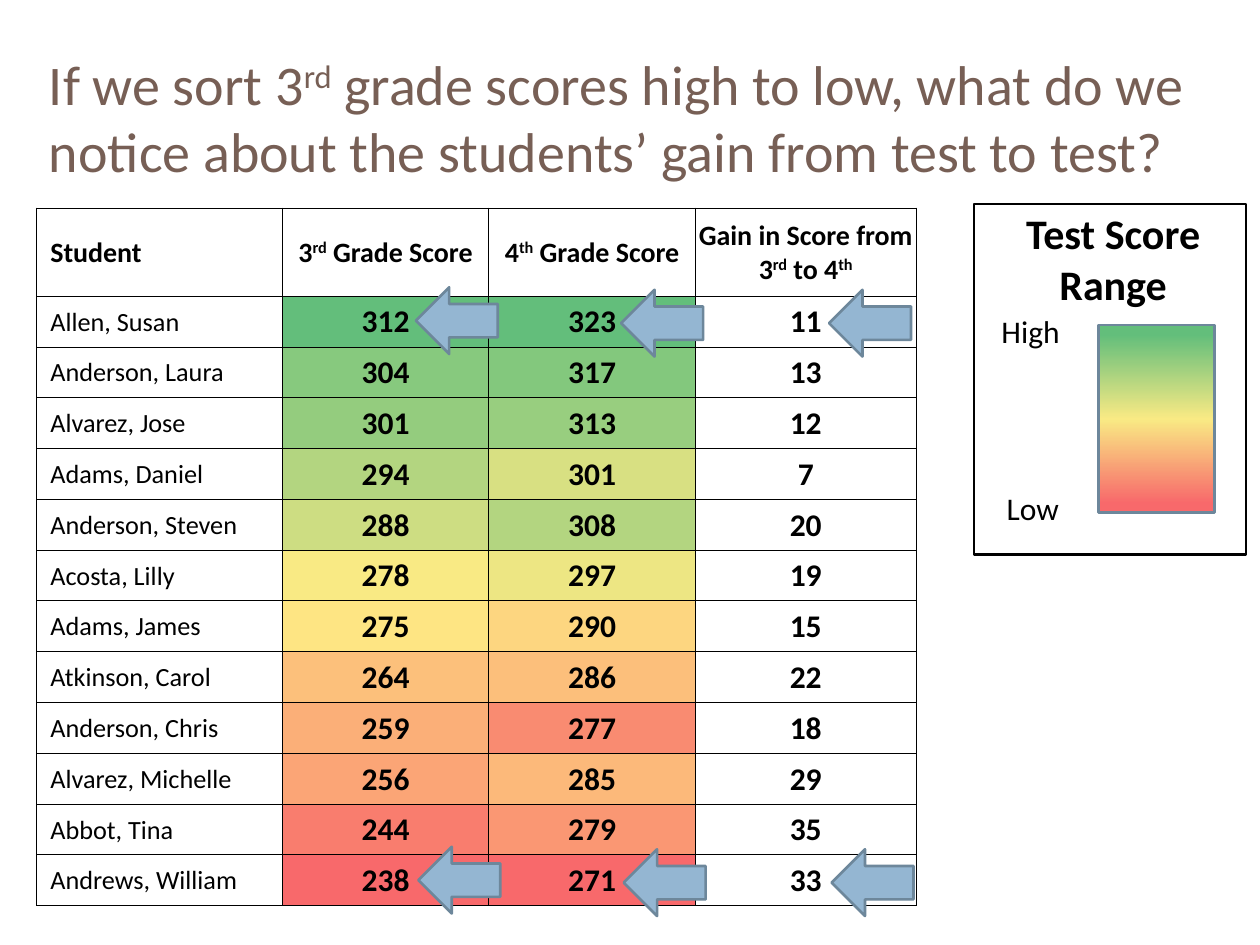
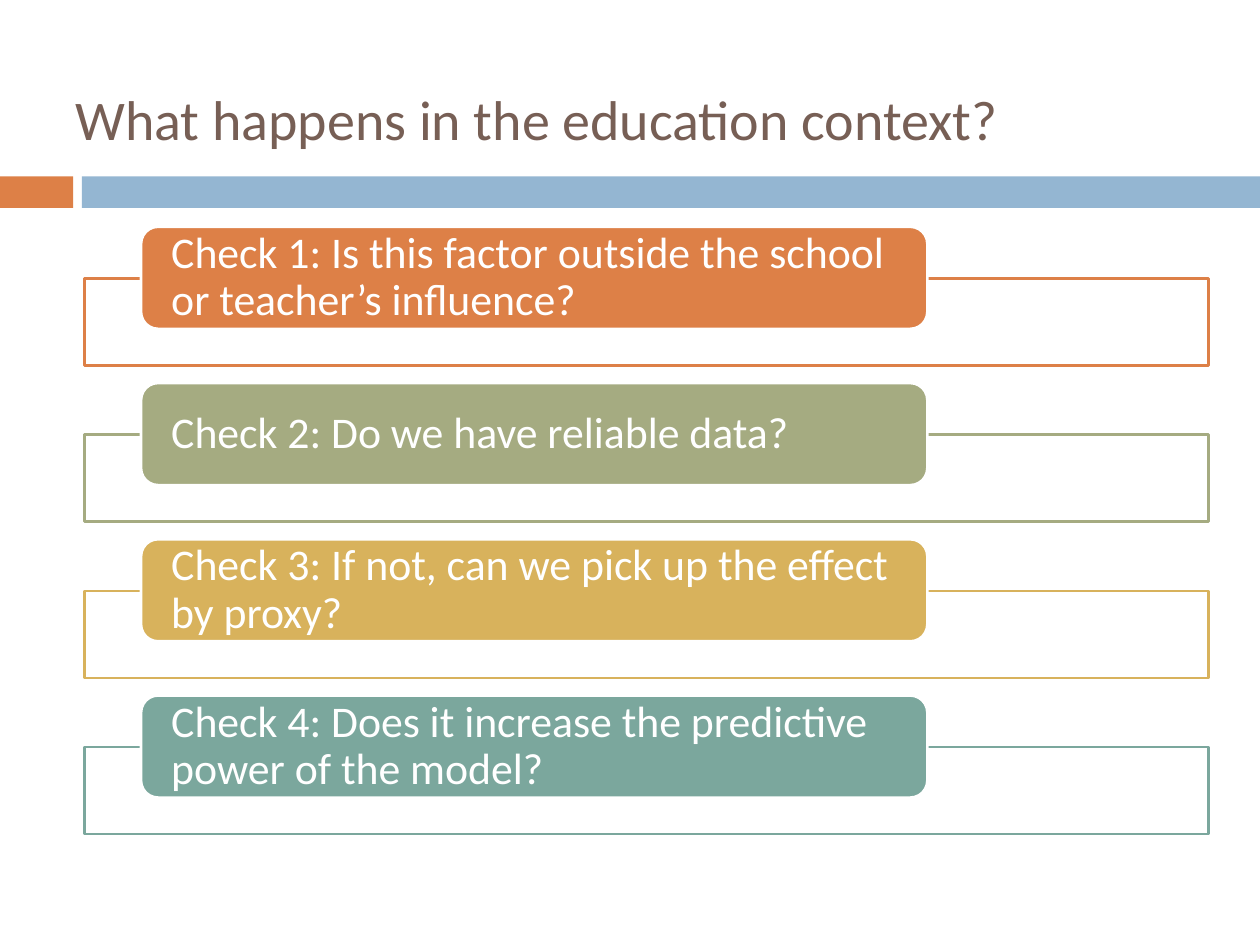
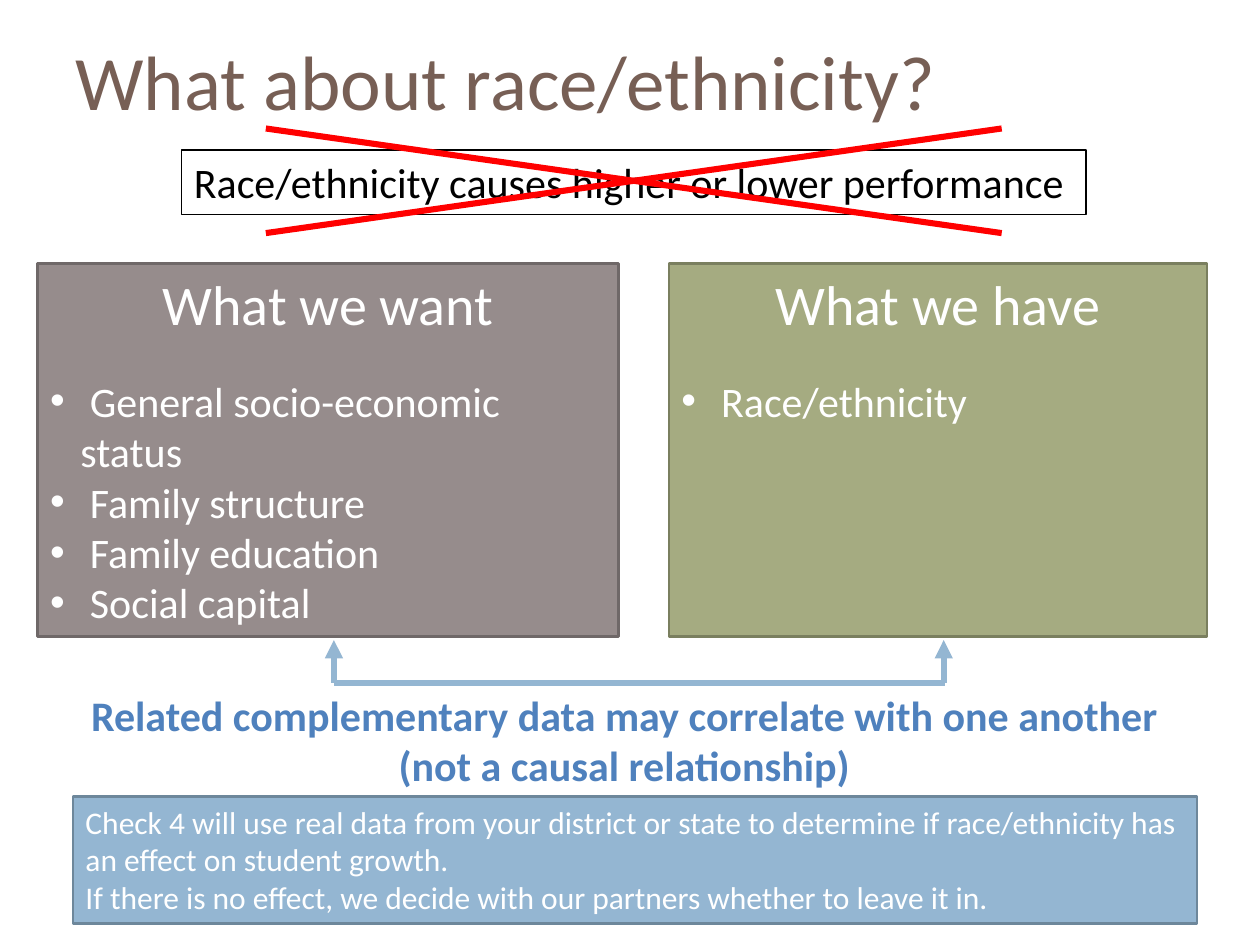
"""Builds three slides on student score growth and checks for model factors."""
from copy import deepcopy

from lxml import etree
from pptx import Presentation
from pptx import util as u
from pptx.dml.color import RGBColor
from pptx.enum import shapes, text
from pptx.oxml import ns

ORANGE, BLUE, GREEN, GOLD, TEAL = "DD8047", "94B6D2", "A5AB81", "D8B25C", "7BA79D"
BROWN, BLUE_EDGE, BLACK, WHITE, RED = "775F55", "6D879B", "000000", "FFFFFF", "FF0000"
CENTER, LEFT = text.PP_ALIGN.CENTER, text.PP_ALIGN.LEFT
MIDDLE, TOP = text.MSO_ANCHOR.MIDDLE, text.MSO_ANCHOR.TOP
SHAPE = shapes.MSO_SHAPE
BODY = {"word_wrap": True, "vertical_anchor": TOP}
TITLE = {"word_wrap": True, "vertical_anchor": MIDDLE}


def draw(slide, kind, box, fill=None, line=None, width=1.5):
    """Add a text box (kind None) or a preset shape with plain formatting."""
    place = [u.Inches(value) for value in box]
    if kind is None:
        return slide.shapes.add_textbox(*place)
    shape = slide.shapes.add_shape(kind, *place)
    shape.shadow.inherit = False
    for part, color in ((shape.fill, fill), (shape.line.fill, line)):
        if color:
            part.solid()
            part.fore_color.rgb = RGBColor.from_string(color)
        else:
            part.background()
    if line:
        shape.line.width = u.Pt(width)
    return shape


def write(frame, lines, size, color, align=LEFT, bold=False, frame_format=BODY):
    """Fill a text frame with paragraphs; parts between carets are superscript."""
    for name, value in frame_format.items():
        setattr(frame, name, value)
    for number, line in enumerate(lines):
        paragraph = frame.add_paragraph() if number else frame.paragraphs[0]
        paragraph.alignment = align
        for position, part in enumerate(line.split("^")):
            if not part:
                continue
            run = paragraph.add_run()
            run.text = part
            font_format = {"name": "Calibri", "size": u.Pt(size), "bold": bold}
            for name, value in font_format.items():
                setattr(run.font, name, value)
            run.font.color.rgb = RGBColor.from_string(color)
            if position % 2:
                run._r.get_or_add_rPr().set("baseline", "30000")


presentation = Presentation()
presentation.slide_width, presentation.slide_height = u.Inches(10), u.Inches(7.5)
titles = [
    ("If we sort 3^rd^ grade scores high to low, what do we notice about the "
     "students’ gain from test to test?", (0.29, 0.3, 9.51, 1.25), 32),
    ("What happens in the education context?", (0.5, 0.31, 9, 1.25), 32),
    ("What about race/ethnicity?", (0.5, 0.01, 9, 1.25), 44),
]
slides = []
for title, box, size in titles:
    slide = presentation.slides.add_slide(presentation.slide_layouts[6])
    write(draw(slide, None, box).text_frame, [title], size, BROWN, frame_format=TITLE)
    slides.append(slide)
scores_slide, checks_slide, race_slide = slides

headers = ["Student", "3^rd^ Grade Score", "4^th^ Grade Score",
           "Gain in Score from 3^rd^ to 4^th^"]
students = [
    ("Allen, Susan", 312, "63BE7B", 323, "63BE7B"),
    ("Anderson, Laura", 304, "87C97E", 317, "83C87D"),
    ("Alvarez, Jose", 301, "94CC7E", 313, "98CE7F"),
    ("Adams, Daniel", 294, "B3D580", 301, "D8E082"),
    ("Anderson, Steven", 288, "CDDD82", 308, "B3D580"),
    ("Acosta, Lilly", 278, "F9EA84", 297, "EDE683"),
    ("Adams, James", 275, "FEE583", 290, "FDD680"),
    ("Atkinson, Carol", 264, "FCC07B", 286, "FCBF7B"),
    ("Anderson, Chris", 259, "FBAF78", 277, "F98B71"),
    ("Alvarez, Michelle", 256, "FBA576", 285, "FCB97A"),
    ("Abbot, Tina", 244, "F97D6E", 279, "FA9773"),
    ("Andrews, William", 238, "F8696B", 271, "F8696B"),
]
rows = [[(header, None) for header in headers]]
for name, third, third_color, fourth, fourth_color in students:
    rows.append([(name, None), (str(third), third_color),
                 (str(fourth), fourth_color), (str(fourth - third), None)])

table = scores_slide.shapes.add_table(
    len(rows), len(headers), u.Inches(0.29), u.Inches(1.65), u.Inches(6.97), u.Inches(5.54)).table
table.first_row = table.horz_banding = False
for column, width in zip(table.columns, (1.95, 1.64, 1.64, 1.75)):
    column.width = u.Inches(width)
for row_number, row in enumerate(rows):
    table.rows[row_number].height = u.Inches((5.54 - 0.7) / len(students) if row_number else 0.7)
    for column_number, (words, color) in enumerate(row):
        cell = table.cell(row_number, column_number)
        cell_format = {"margin_left": u.Inches(0.01 if column_number else 0.11),
                       "margin_right": u.Inches(0.01), "margin_top": u.Inches(0.01),
                       "margin_bottom": 0, "vertical_anchor": MIDDLE}
        for name, value in cell_format.items():
            setattr(cell, name, value)
        properties = cell._tc.get_or_add_tcPr()
        for side in ("lnL", "lnR", "lnT", "lnB"):
            border = etree.SubElement(properties, ns.qn("a:" + side), w=str(u.Pt(0.5)))
            border_fill = etree.SubElement(border, ns.qn("a:solidFill"))
            etree.SubElement(border_fill, ns.qn("a:srgbClr"), val=BLACK)
        if color:
            cell.fill.solid()
            cell.fill.fore_color.rgb = RGBColor.from_string(color)
        else:
            cell.fill.background()
        size = 16 if row_number == 0 else 18 if column_number else 15
        write(cell.text_frame, [words], size, BLACK, CENTER if column_number else LEFT,
              row_number == 0 or column_number > 0, {})

for words, box in (("High", (7.85, 2.43, 0.67, 0.4)), ("Low", (7.89, 3.83, 0.62, 0.4))):
    write(draw(scores_slide, None, box).text_frame, [words], 18, BLACK)
legend_title = draw(scores_slide, None, (7.75, 1.6, 2.17, 0.91))
write(legend_title.text_frame, ["Test Score", "Range"], 24, BLACK, CENTER, True)

color_scale = draw(scores_slide, SHAPE.RECTANGLE, (8.72, 2.58, 0.92, 1.49), WHITE, BLUE_EDGE)
color_scale.fill.gradient()
color_scale.fill.gradient_angle = 270
stop_list = color_scale._element.spPr.find(".//" + ns.qn("a:gsLst"))
stop_list.append(deepcopy(stop_list[0]))
scale_stops = ((0.05, "63BE7B"), (0.5, "F9EA84"), (0.95, "F8696B"))
for stop, (position, color) in zip(color_scale.fill.gradient_stops, scale_stops):
    stop.position = position
    stop.color.rgb = RGBColor.from_string(color)
draw(scores_slide, SHAPE.RECTANGLE, (7.73, 1.62, 2.16, 2.78), None, BLACK)

for shift, top in ((0, 2.28), (0.02, 6.72)):
    for left, drop in ((3.3, 0), (4.93, 0.02), (6.58, 0.02)):
        arrow = draw(scores_slide, SHAPE.RIGHT_ARROW, (left + shift, top + drop, 0.65, 0.53),
                     BLUE, BLUE_EDGE)
        arrow.rotation = 180

draw(checks_slide, SHAPE.RECTANGLE, (0, 1.4, 0.58, 0.25), ORANGE)
draw(checks_slide, SHAPE.RECTANGLE, (0.65, 1.4, 9.35, 0.25), BLUE)
checks = [
    ("Check 1: Is this factor outside the school or teacher’s influence?", ORANGE),
    ("Check 2: Do we have reliable data?", GREEN),
    ("Check 3: If not, can we pick up the effect by proxy?", GOLD),
    ("Check 4: Does it increase the predictive power of the model?", TEAL),
]
check_format = {"word_wrap": True, "vertical_anchor": MIDDLE, "margin_top": 0,
                "margin_bottom": 0, "margin_left": u.Inches(0.2), "margin_right": u.Inches(0.2)}
for number, (question, color) in enumerate(checks):
    top = 1.8 + 1.24 * number
    draw(checks_slide, SHAPE.RECTANGLE, (0.67, top + 0.41, 8.92, 0.69), WHITE, color)
    label = draw(checks_slide, SHAPE.ROUNDED_RECTANGLE, (1.12, top, 6.24, 0.81), color, WHITE)
    write(label.text_frame, [question], 25, WHITE, frame_format=check_format)
    label.text_frame.paragraphs[0].line_spacing = 0.9

panels = [
    ("What we have", [" Race/ethnicity"], (5.31, 2.09, 4.27, 2.96), GREEN, "7A7F5F"),
    ("What we want", [" General socio-economic status", " Family structure",
                      " Family education", " Social capital"],
     (0.3, 2.09, 4.61, 2.96), "968C8C", "6F6868"),
]
for heading, items, box, fill, edge in panels:
    frame = draw(race_slide, SHAPE.RECTANGLE, box, fill, edge).text_frame
    write(frame, [heading], 32, WHITE, CENTER)
    for number, item in enumerate(items):
        paragraph = frame.add_paragraph()
        paragraph.alignment = LEFT
        properties = paragraph._p.get_or_add_pPr()
        properties.set("marL", str(u.Inches(0.24)))
        properties.set("indent", str(u.Inches(-0.24)))
        etree.SubElement(properties, ns.qn("a:buFont"), typeface="Arial")
        etree.SubElement(properties, ns.qn("a:buChar"), char="•")
        if number == 0:
            paragraph.space_before = u.Pt(22)
        run = paragraph.add_run()
        run.text = item
        for name, value in {"name": "Calibri", "size": u.Pt(24)}.items():
            setattr(run.font, name, value)
        run.font.color.rgb = RGBColor.from_string(WHITE)

relation = draw(race_slide, None, (0.33, 5.42, 9.25, 0.91))
write(relation.text_frame, ["Related complementary data may correlate with one another",
                            "(not a causal relationship)"], 24, "4F81BD", CENTER, True)
claim = draw(race_slide, SHAPE.RECTANGLE, (1.44, 1.19, 7.18, 0.51), None, BLACK, 0.75)
write(claim.text_frame, ["Race/ethnicity causes higher or lower performance"], 24, BLACK)

lines = [
    ((2.11, 1.02, 7.95, 1.85), RED, False),
    ((7.95, 1.02, 2.11, 1.85), RED, False),
    ((2.65, 5.42, 7.5, 5.42), BLUE, False),
    ((2.65, 5.08, 2.65, 5.42), BLUE, True),
    ((7.49, 5.08, 7.49, 5.42), BLUE, True),
]
for ends, color, arrowhead in lines:
    connector = race_slide.shapes.add_connector(
        shapes.MSO_CONNECTOR.STRAIGHT, *[u.Inches(value) for value in ends])
    connector.line.width = u.Pt(3.5)
    connector.line.color.rgb = RGBColor.from_string(color)
    if arrowhead:
        etree.SubElement(connector.line._get_or_add_ln(), ns.qn("a:headEnd"), type="triangle")
    etree.SubElement(connector._element.spPr, ns.qn("a:effectLst"))

note = draw(race_slide, SHAPE.RECTANGLE, (0.58, 6.32, 8.92, 1.01), BLUE, BLUE_EDGE)
write(note.text_frame, [
    "Check 4 will use real data from your district or state to determine if "
    "race/ethnicity has an effect on student growth.",
    "If there is no effect, we decide with our partners whether to leave it in."], 18, WHITE)

presentation.save("out.pptx")
